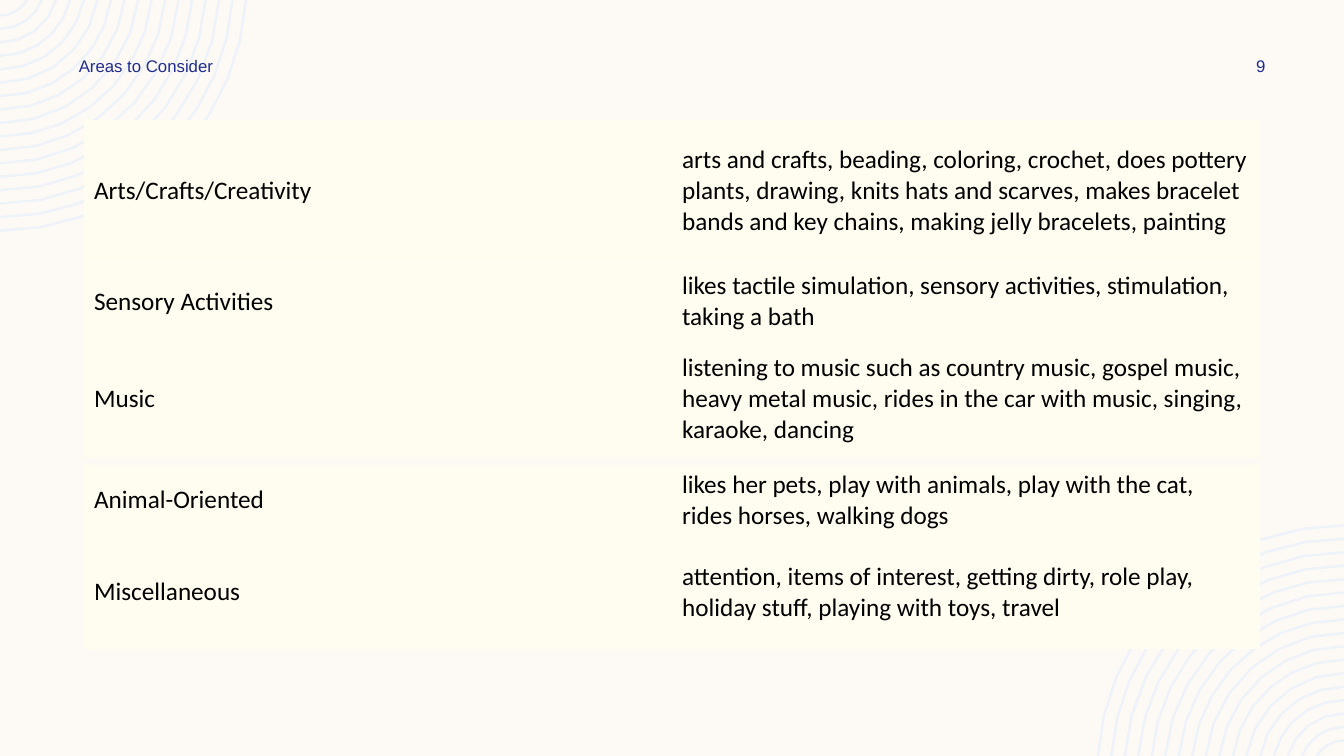
from dataclasses import dataclass
from math import asin, cos, pi, sin

from pptx import Presentation
from pptx.dml.color import RGBColor
from pptx.enum.text import MSO_ANCHOR, PP_ALIGN
from pptx.oxml.ns import qn
from pptx.util import Inches, Pt

MIDDLE = MSO_ANCHOR.MIDDLE
LEFT, CENTER = PP_ALIGN.LEFT, PP_ALIGN.CENTER
PLAIN_TABLE = "{2D5ABB26-0587-4C30-8999-92F81FD0307C}"
COLUMNS, ROWS = 16, 9

AREAS = [
    (1.43, 1.69, "Arts/Crafts/Creativity",
     "arts and crafts, beading, coloring, crochet, does pottery plants, drawing, "
     "knits hats and scarves, makes bracelet bands and key chains, "
     "making jelly bracelets, painting"),
    (3.13, 0.92, "Sensory Activities",
     "likes tactile simulation, sensory activities, stimulation, taking a bath"),
    (4.05, 1.4, "Music",
     "listening to music such as country music, gospel music, heavy metal music, "
     "rides in the car with music, singing, karaoke, dancing"),
    (5.53, 0.84, "Animal-Oriented",
     "likes her pets, play with animals, play with the cat, rides horses, walking dogs"),
    (6.37, 1.36, "Miscellaneous",
     "attention, items of interest, getting dirty, role play, holiday stuff, "
     "playing with toys, travel"),
]


@dataclass(frozen=True)
class Theme:
    background: RGBColor = RGBColor(0xFD, 0xFA, 0xF6)
    rings: RGBColor = RGBColor(0xEE, 0xF3, 0xFA)
    panel: RGBColor = RGBColor(0xFF, 0xFC, 0xF0)
    heading: RGBColor = RGBColor(0x1F, 0x2C, 0x8F)
    body: RGBColor = RGBColor(0, 0, 0)
    heading_font: str = "Arial"
    body_font: str = "Calibri"
    heading_size: int = 12
    body_size: int = 18


class SlideBuilder:
    def __init__(self, deck, theme):
        self.theme = theme
        self.unit = deck.slide_width / COLUMNS
        self.slide = deck.slides.add_slide(deck.slide_layouts[6])
        fill = self.slide.background.fill
        fill.solid()
        fill.fore_color.rgb = theme.background

    def span(self, *lengths):
        return [round(length * self.unit) for length in lengths]

    def style(self, frame, font_name, size, color, align=LEFT):
        for paragraph in frame.paragraphs:
            paragraph.alignment = align
            for run in paragraph.runs:
                run.font.name = font_name
                run.font.size = Pt(size)
                run.font.color.rgb = color

    def header(self, wording, column, width, align=LEFT):
        theme = self.theme
        frame = self.slide.shapes.add_textbox(*self.span(column, 0.6, width, 0.36)).text_frame
        frame.word_wrap = True
        frame.vertical_anchor = MIDDLE
        frame.text = wording
        self.style(frame, theme.heading_font, theme.heading_size, theme.heading, align)

    def area(self, row, height, *entries):
        theme = self.theme
        table = self.slide.shapes.add_table(1, 2, *self.span(1, row, 14, height)).table
        table.first_row = table.horz_banding = False
        table._tbl.tblPr.find(qn("a:tableStyleId")).text = PLAIN_TABLE
        for cell, entry in zip(table.rows[0].cells, entries):
            cell.fill.solid()
            cell.fill.fore_color.rgb = theme.panel
            cell.vertical_anchor = MIDDLE
            cell.text = entry
            self.style(cell.text_frame, theme.body_font, theme.body_size, theme.body)

    def arc(self, radius, rise):
        steps = 3 + round(2 * radius)
        start = asin(rise / radius)
        angles = [start + (pi / 2 - start) * step / steps for step in range(steps + 1)]
        return [(radius * cos(angle), radius * sin(angle) - rise) for angle in angles]

    def corner_rings(self, opposite=False, count=17, outer=2.95, gap=0.16, band=0.03, rise=0.19):
        def place(point):
            x, y = point
            return self.span(COLUMNS - x, ROWS - y) if opposite else self.span(x, y)

        builder = None
        for ring in range(count):
            radius = outer - gap * ring
            outline = self.arc(radius, rise) + self.arc(radius - band, rise)[::-1]
            first, *rest = [place(point) for point in outline]
            if builder is None:
                builder = self.slide.shapes.build_freeform(*first)
            else:
                builder.move_to(*first)
            builder.add_line_segments(rest, close=True)
        rings = builder.convert_to_shape()
        rings.shadow.inherit = False
        rings.fill.solid()
        rings.fill.fore_color.rgb = self.theme.rings
        rings.line.fill.background()


def main():
    deck = Presentation()
    deck.slide_width, deck.slide_height = Inches(40 / 3), Inches(7.5)
    page = SlideBuilder(deck, Theme())
    page.corner_rings()
    page.corner_rings(opposite=True)
    page.header("Areas to Consider", 0.82, 4.2)
    page.header("9", 14.36, 1.3, CENTER)
    for area in AREAS:
        page.area(*area)
    deck.save("out.pptx")


if __name__ == "__main__":
    main()
